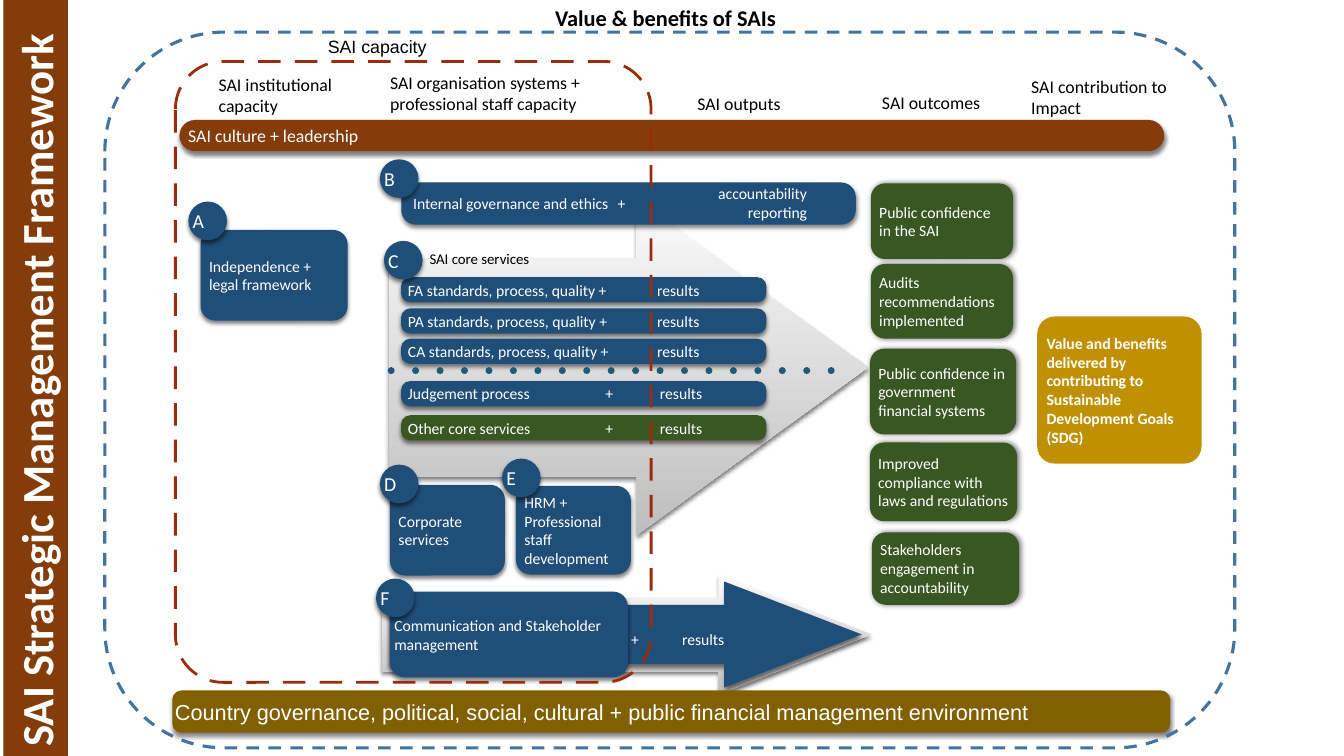
import pptx
import pptx.util
import pptx.dml.color
import pptx.enum.dml
import pptx.enum.shapes
import pptx.enum.text
import pptx.oxml
import pptx.oxml.ns

Pt = pptx.util.Pt
RGB = pptx.dml.color.RGBColor
SHAPE = pptx.enum.shapes.MSO_SHAPE
ALIGN = pptx.enum.text.PP_ALIGN
ANCHOR = pptx.enum.text.MSO_ANCHOR

WHITE = RGB(0xFF, 0xFF, 0xFF)
BLACK = RGB(0x00, 0x00, 0x00)
NAVY = RGB(0x1F, 0x4E, 0x79)
TEAL = RGB(0x1F, 0x5A, 0x7A)
STEEL = RGB(0x43, 0x73, 0x9E)
GREEN = RGB(0x38, 0x57, 0x23)
BROWN = RGB(0x84, 0x3C, 0x0B)
RED = RGB(0x99, 0x2B, 0x0F)
GOLD = RGB(0xBF, 0x90, 0x00)
OLIVE = RGB(0x80, 0x60, 0x00)
PALE_GREY = RGB(0xFB, 0xFB, 0xFB)
MID_GREY = RGB(0xBE, 0xBE, 0xBE)

BELOW = (3, 2, 90)
BESIDE = (4, 1, 0)
XMLNS = 'xmlns:a="http://schemas.openxmlformats.org/drawingml/2006/main"'

deck = pptx.Presentation()
deck.slide_width, deck.slide_height = Pt(960), Pt(540)
slide = deck.slides.add_slide(deck.slide_layouts[6])


def place(kind, box, fill=None, radius=None, shadow=None):
    part = slide.shapes.add_shape(kind, *[Pt(v) for v in box])
    part.shadow.inherit = False
    part.line.fill.background()
    if fill is None:
        part.fill.background()
    else:
        part.fill.solid()
        part.fill.fore_color.rgb = fill
    if radius is not None:
        part.adjustments[0] = radius / min(box[2:])
    if shadow:
        blur, distance, angle = shadow
        effects = part.element.spPr.find(pptx.oxml.ns.qn("a:effectLst"))
        effects.append(pptx.oxml.parse_xml(
            f'<a:outerShdw {XMLNS} blurRad="{Pt(blur)}" dist="{Pt(distance)}" dir="{angle * 60000}" '
            'algn="ctr" rotWithShape="0"><a:srgbClr val="000000"><a:alpha val="50000"/></a:srgbClr></a:outerShdw>'))
    return part


def write(part, text, size=11.2, colour=WHITE, font="Calibri", bold=False, insets=(3, 3, 3, 3),
          anchor=ANCHOR.MIDDLE, align=ALIGN.LEFT, wrap=True, tabs=()):
    frame = part.text_frame
    sides = ("margin_left", "margin_top", "margin_right", "margin_bottom")
    layout = dict(zip(sides, [Pt(v) for v in insets]), word_wrap=wrap, vertical_anchor=anchor)
    for name, value in layout.items():
        setattr(frame, name, value)
    paragraph = frame.paragraphs[0]
    paragraph.alignment = align
    if tabs:
        stops = "".join(f'<a:tab pos="{Pt(t)}" algn="l"/>' for t in tabs)
        paragraph._p.get_or_add_pPr().append(pptx.oxml.parse_xml(f"<a:tabLst {XMLNS}>{stops}</a:tabLst>"))
    run = paragraph.add_run()
    run.text = text
    for name, value in {"size": Pt(size), "name": font, "bold": bold}.items():
        setattr(run.font, name, value)
    run.font.color.rgb = colour


core_arrow = place(SHAPE.RIGHT_ARROW, (278, 142.5, 342, 239.8), PALE_GREY, shadow=BELOW)
communication_backing = place(SHAPE.RIGHT_ARROW, (272.9, 410.4, 349.2, 85.7), PALE_GREY, shadow=BELOW)
communication_arrow = place(SHAPE.RIGHT_ARROW, (278.6, 415.4, 337, 75.6), NAVY, shadow=BELOW)
for arrow, shaft, head in ((core_arrow, 0.65, 0.69), (communication_backing, 0.61, 1.27),
                           (communication_arrow, 0.56, 1.3)):
    arrow.adjustments[0], arrow.adjustments[1] = shaft, head
for arrow in (core_arrow, communication_backing):
    arrow.fill.gradient()
    arrow.fill.gradient_angle = 270
    for stop, shade in zip(arrow.fill.gradient_stops, (PALE_GREY, MID_GREY)):
        stop.color.rgb = shade

environment = place(SHAPE.ROUNDED_RECTANGLE, (123.1, 493.2, 712.8, 30.2), OLIVE, 6.5, BELOW)
write(environment, "Country governance, political, social, cultural + public financial management environment",
      15.5, font="Arial", insets=(0, 0, 0, 0))
culture = place(SHAPE.ROUNDED_RECTANGLE, (128.2, 85.7, 703.4, 22.3), BROWN, 11.15, BELOW)
write(culture, "SAI culture + leadership", 12.7)

headings = (
    ("SAI institutional capacity", (156.2, 52.6, 115.2, 31), True),
    ("SAI organisation systems + professional staff capacity", (278.6, 51.1, 167, 31), True),
    ("SAI outputs", (498.2, 66.2, 59.8, 15.1), False),
    ("SAI outcomes", (630, 65.5, 85.7, 15.1), True),
    ("SAI contribution to Impact", (736.6, 54, 103, 31), True),
)
for text, box, wrap in headings:
    heading = slide.shapes.add_textbox(*[Pt(v) for v in box])
    write(heading, text, 12.7, BLACK, insets=(0, 0, 0, 0), anchor=ANCHOR.TOP, wrap=wrap)

governance = place(SHAPE.ROUNDED_RECTANGLE, (286.6, 130.3, 324.7, 30.2), NAVY, 10.5, BELOW)
write(governance, "Internal governance and ethics\t+", insets=(5.4, 3, 3, 3), tabs=(146,))
reporting = place(SHAPE.ROUNDED_RECTANGLE, (474.5, 125.3, 105.1, 38.9), radius=10.5)
write(reporting, "accountability reporting", insets=(0, 0, 0, 0), align=ALIGN.RIGHT)

domains = (
    ("Independence + legal framework", (143.3, 164.2, 105.1, 64.8), 3),
    ("Corporate services", (278.6, 346.3, 82.1, 64.8), 3),
    ("HRM + Professional staff development", (368.6, 347, 82.1, 63.4), 3),
    ("Communication and Stakeholder management", (278.6, 422.6, 169.9, 61.2), 0),
)
for text, box, inset in domains:
    domain = place(SHAPE.ROUNDED_RECTANGLE, box, NAVY, 10.5, BELOW)
    write(domain, text, insets=(inset,) * 4)

services = (
    ("FA standards, process, quality +\tresults", 198, NAVY, (178,)),
    ("PA standards, process, quality +\tresults", 220.3, NAVY, (178,)),
    ("CA standards, process, quality +\tresults", 241.9, NAVY, (178,)),
    ("Judgement process\t+\tresults", 272.2, NAVY, (141, 180)),
    ("Other core services\t+\tresults", 296.6, GREEN, (141, 180)),
)
for text, top, fill, tabs in services:
    service = place(SHAPE.ROUNDED_RECTANGLE, (286.5, top, 261, 18), fill, 6.6, BELOW)
    write(service, text, tabs=tabs)

outcomes = (
    ("Public confidence in the SAI", (622.1, 131, 101.5, 54)),
    ("Audits recommendations implemented", (622.1, 188.6, 101.5, 53.3)),
    ("Public confidence in government financial systems", (621.4, 249.1, 104.4, 61.2)),
    ("Improved compliance with laws and regulations", (621.4, 316.1, 105.1, 56.2)),
    ("Stakeholders engagement in accountability", (622.8, 380.2, 105.1, 51.8)),
)
for text, box in outcomes:
    outcome = place(SHAPE.ROUNDED_RECTANGLE, box, GREEN, 10, BESIDE)
    write(outcome, text)

impact = place(SHAPE.ROUNDED_RECTANGLE, (740.9, 226.1, 117.4, 105.1), GOLD, 12.5)
write(impact, "Value and benefits delivered by contributing to Sustainable Development Goals (SDG)", bold=True)

captions = (
    ("SAI core services", (303.8, 175.7, 77.8, 18.7), 10.6, BLACK, "Calibri", False, ()),
    ("+\tresults", (447.8, 447.1, 100.1, 19.4), 11.2, WHITE, "Calibri", True, (36.4,)),
    ("SAI capacity", (231.1, 23, 115.9, 20.9), 12.7, BLACK, "Arial", True, ()),
)
for text, box, size, colour, font, wrap, tabs in captions:
    caption = slide.shapes.add_textbox(*[Pt(v) for v in box])
    write(caption, text, size, colour, font, wrap=wrap, tabs=tabs)

letters = {"A": (134.6, 144), "B": (271.4, 113.8), "C": (274.3, 172.1),
           "D": (271.4, 331.9), "E": (358.6, 327.6), "F": (268.6, 413.3)}
for letter, (left, top) in letters.items():
    badge = place(SHAPE.OVAL, (left, top, 27.6, 27.6), NAVY, shadow=BELOW)
    write(badge, letter, 14.1, insets=(-1, 0, 0, 0))

divider = slide.shapes.add_connector(pptx.enum.shapes.MSO_CONNECTOR.STRAIGHT,
                                     Pt(279.4), Pt(265), Pt(595.4), Pt(265))
capacity_frame = place(SHAPE.ROUNDED_RECTANGLE, (125.3, 43.9, 339.8, 443.5), radius=34)
value_frame = place(SHAPE.ROUNDED_RECTANGLE, (74.9, 23, 807.1, 511.2), radius=85.2)
for part, colour, width in ((divider, TEAL, 5), (capacity_frame, RED, 2), (value_frame, STEEL, 2.25)):
    part.line.color.rgb = colour
    part.line.width = Pt(width)
value_frame.line.dash_style = pptx.enum.dml.MSO_LINE.DASH
for part, dash, gap in ((divider, 100000, 250000), (capacity_frame, 800000, 500000)):
    outline = part.element.spPr.find(pptx.oxml.ns.qn("a:ln"))
    outline.append(pptx.oxml.parse_xml(f'<a:custDash {XMLNS}><a:ds d="{dash}" sp="{gap}"/></a:custDash>'))
divider.element.spPr.find(pptx.oxml.ns.qn("a:ln")).set("cap", "rnd")
divider.element.spPr.append(pptx.oxml.parse_xml(f"<a:effectLst {XMLNS}/>"))

framework = place(SHAPE.RECTANGLE, (-244.8, 247, 540.7, 46.1), BROWN)
framework.rotation = 270
write(framework, "SAI Strategic Management Framework", 32, bold=True, insets=(7.2, 3.6, 7.2, 3.6), anchor=ANCHOR.TOP)
title = slide.shapes.add_textbox(Pt(389.5), Pt(-0.7), Pt(190.8), Pt(26.6))
write(title, "Value & benefits of SAIs", 16, BLACK, bold=True, insets=(7.2, 3.6, 7.2, 3.6), anchor=ANCHOR.TOP)

deck.save("out.pptx")
